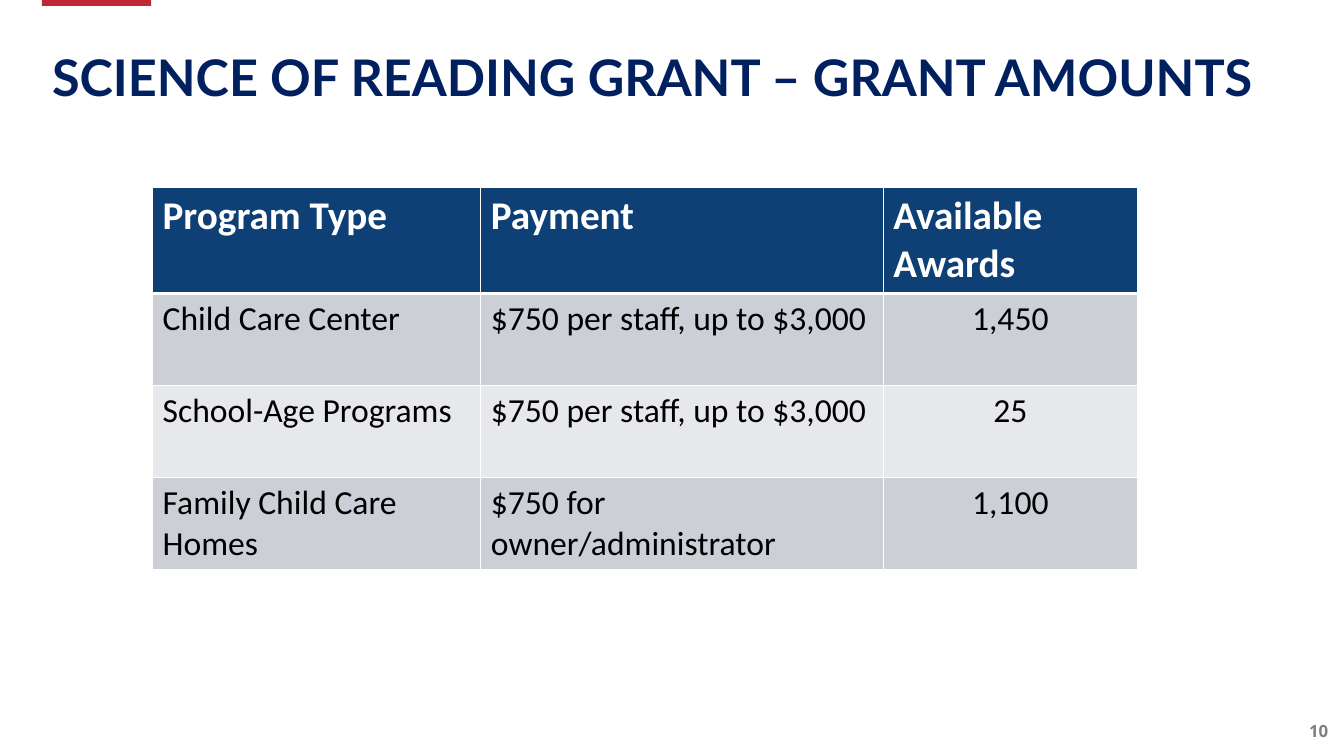
from lxml import etree
from pptx import Presentation
from pptx.dml.color import RGBColor
from pptx.enum.shapes import MSO_SHAPE
from pptx.enum.text import MSO_ANCHOR, PP_ALIGN
from pptx.oxml.ns import qn
from pptx.util import Pt

RECT = MSO_SHAPE.RECTANGLE
TOP, MIDDLE = MSO_ANCHOR.TOP, MSO_ANCHOR.MIDDLE
LEFT, CENTER = PP_ALIGN.LEFT, PP_ALIGN.CENTER

NAVY, BLUE, RED = "002060", "0E3F75", "C12637"
WHITE, BLACK, GRAY = "FFFFFF", "000000", "808080"
BANDS = ["CCCFD6", "E7E8EC"]

WIDTHS = [234.5, 287.5, 181.5]
HEIGHTS = [75.6, 65.8, 65.8, 65.8]
ROWS = [
    ["Program Type", "Payment", "Available Awards"],
    ["Child Care Center", "$750 per staff, up to $3,000", "1,450"],
    ["School-Age Programs", "$750 per staff, up to $3,000", "25"],
    ["Family Child Care Homes", "$750 for owner/administrator", "1,100"],
]


def color(value):
    return RGBColor.from_string(value)


class Deck:
    def __init__(self):
        self.prs = Presentation()
        self.prs.slide_width, self.prs.slide_height = Pt(960), Pt(540)
        self.slide = self.prs.slides.add_slide(self.prs.slide_layouts[5])

    def label(self, frame, text, face, size, tint, bold=True, align=LEFT):
        frame.word_wrap = True
        para = frame.paragraphs[0]
        para.text = text
        para.alignment = align
        font = para.font
        font.name, font.size, font.bold = face, Pt(size), bold
        font.color.rgb = color(tint)
        return para

    def title(self, box, text):
        shape = self.slide.shapes.title
        shape.left, shape.top, shape.width, shape.height = map(Pt, box)
        frame = shape.text_frame
        frame.vertical_anchor = TOP
        self.label(frame, text, "Lato", 36, NAVY).line_spacing = 0.9

    def bar(self, box, fill):
        shape = self.slide.shapes.add_shape(RECT, *map(Pt, box))
        shape.shadow.inherit = False
        shape.fill.solid()
        shape.fill.fore_color.rgb = color(fill)
        shape.line.fill.background()

    def number(self, box, text):
        frame = self.slide.shapes.add_textbox(*map(Pt, box)).text_frame
        frame.vertical_anchor = MIDDLE
        self.label(frame, text, "Open Sans", 12, GRAY, align=CENTER)

    def edges(self, cell, row):
        props = cell._tc.get_or_add_tcPr()
        thick = {"T": 3 if row == 1 else 1, "B": 3 if row == 0 else 1}
        for spot, side in enumerate("LRTB"):
            line = etree.Element(qn(f"a:ln{side}"), w=str(Pt(thick.get(side, 1))))
            fill = etree.SubElement(line, qn("a:solidFill"))
            etree.SubElement(fill, qn("a:srgbClr"), val=WHITE)
            props.insert(spot, line)

    def table(self, left, top, widths, heights, rows):
        box = [left, top, sum(widths), sum(heights)]
        grid = self.slide.shapes.add_table(len(rows), len(widths), *map(Pt, box)).table
        for col, width in zip(grid.columns, widths):
            col.width = Pt(width)
        for row, height in zip(grid.rows, heights):
            row.height = Pt(height)
        for r, texts in enumerate(rows):
            head = r == 0
            for c, text in enumerate(texts):
                cell = grid.cell(r, c)
                cell.fill.solid()
                cell.fill.fore_color.rgb = color(BLUE if head else BANDS[(r - 1) % 2])
                self.edges(cell, r)
                self.label(cell.text_frame, text, "Calibri", 28 if head else 24,
                           WHITE if head else BLACK, head,
                           CENTER if c == 2 and not head else LEFT)


def main():
    deck = Deck()
    # Accent bar and page number
    deck.bar([30, -3, 78, 7.2], RED)
    deck.number([924, 504, 36, 36], "10")
    # Title
    deck.title([30, 34.5, 900, 77], "SCIENCE OF READING GRANT – GRANT AMOUNTS")
    # Grant amounts
    deck.table(109, 134, WIDTHS, HEIGHTS, ROWS)
    deck.prs.save("out.pptx")


if __name__ == "__main__":
    main()
